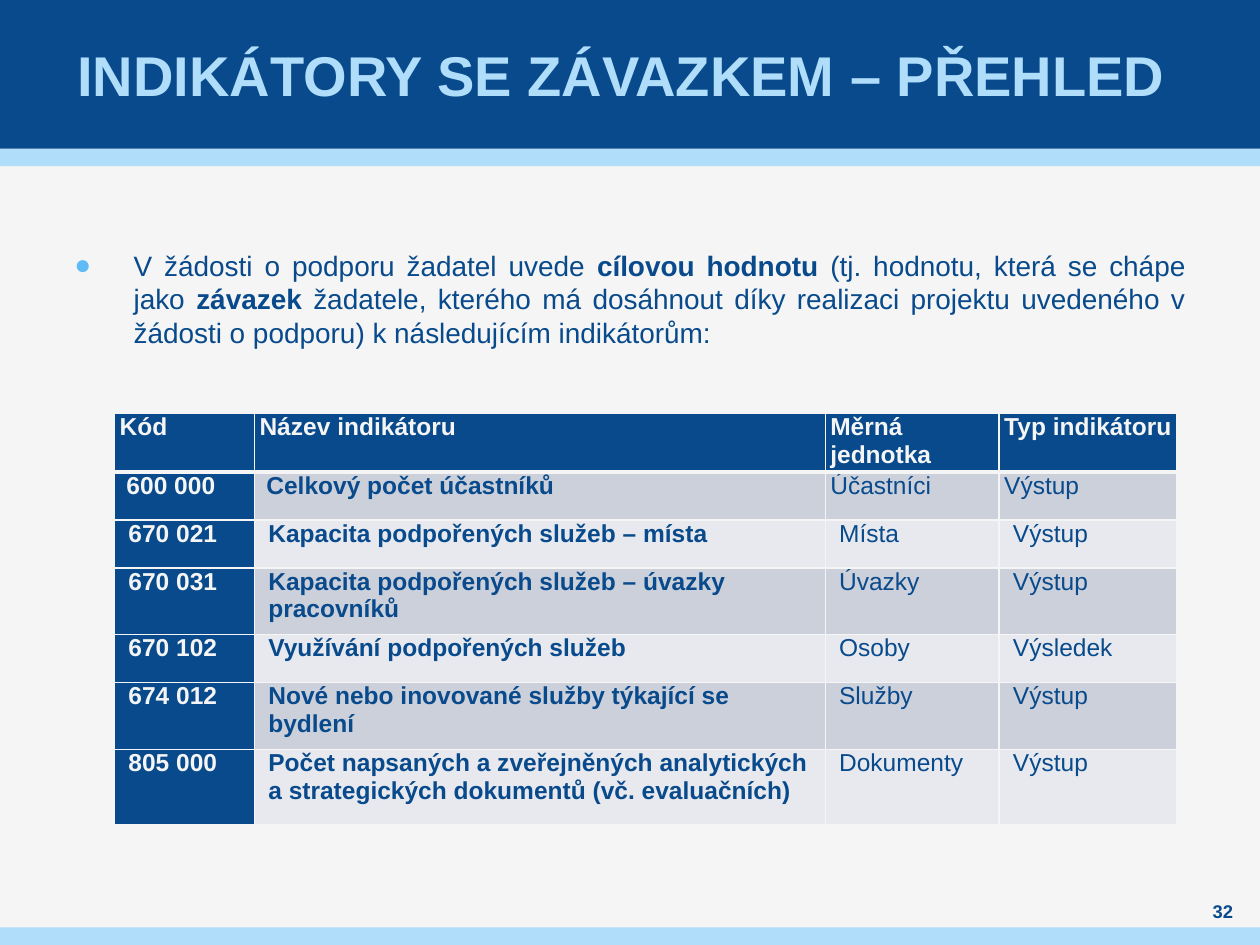
from lxml import etree
from pptx import Presentation
from pptx.dml.color import RGBColor
from pptx.enum.shapes import MSO_SHAPE
from pptx.enum.text import MSO_ANCHOR, PP_ALIGN
from pptx.oxml.ns import qn
from pptx.util import Inches, Pt

RECT = MSO_SHAPE.RECTANGLE
TOP, MIDDLE = MSO_ANCHOR.TOP, MSO_ANCHOR.MIDDLE
LEFT, CENTER, JUSTIFY = PP_ALIGN.LEFT, PP_ALIGN.CENTER, PP_ALIGN.JUSTIFY
NAVY, SKY, DOT, PAPER = "084A8B", "AFDDFA", "5FBBF5", "F5F5F5"
BANDS = ("CCD0DA", "E7E9EE")

INTRO = [
    ("V žádosti o podporu žadatel uvede ", False),
    ("cílovou hodnotu ", True),
    ("(tj. hodnotu, která se chápe jako ", False),
    ("závazek", True),
    (" žadatele, kterého má dosáhnout díky realizaci projektu uvedeného "
     "v žádosti o podporu) k následujícím indikátorům:", False),
]
INDICATORS = [
    ("Kód", "Název indikátoru", "Měrná jednotka", "Typ indikátoru"),
    (" 600 000", " Celkový počet účastníků", "Účastníci", "Výstup"),
    ("670 021", "Kapacita podpořených služeb – místa", "Místa", "Výstup"),
    ("670 031", "Kapacita podpořených služeb – úvazky pracovníků", "Úvazky", "Výstup"),
    ("670 102", "Využívání podpořených služeb", "Osoby", "Výsledek"),
    ("674 012", "Nové nebo inovované služby týkající se bydlení", "Služby", "Výstup"),
    ("805 000", "Počet napsaných a zveřejněných analytických a strategických "
     "dokumentů (vč. evaluačních)", "Dokumenty", "Výstup"),
]
COLUMNS = (1.11, 4.53, 1.38, 1.41)
ROWS = (0.43, 0.38, 0.38, 0.53, 0.38, 0.53, 0.6)


def rgb(value):
    """Turn a hex string into a colour."""
    return RGBColor.from_string(value)


class Deck:
    """Holds the style and the current slide."""

    def __init__(self, font):
        """Start a presentation with one blank slide."""
        self.font = font
        self.prs = Presentation()
        self.prs.slide_width, self.prs.slide_height = Inches(10), Inches(7.5)
        self.s = self.prs.slides.add_slide(self.prs.slide_layouts[6])
        self.s.background.fill.solid()
        self.s.background.fill.fore_color.rgb = rgb(PAPER)

    def band(self, y, h, color):
        """Draw a band across the slide."""
        sp = self.s.shapes.add_shape(RECT, 0, Inches(y), self.prs.slide_width, Inches(h))
        sp.shadow.inherit = False
        sp.fill.solid()
        sp.fill.fore_color.rgb = rgb(color)
        sp.line.fill.background()

    def run(self, p, text, size, color, bold):
        """Add one styled run."""
        r = p.add_run()
        r.text = text
        r.font.name, r.font.size, r.font.bold = self.font, Pt(size), bold
        r.font.color.rgb = rgb(color)

    def spacing(self, p, points, margin, indent):
        """Set the paragraph spacing and indents."""
        p.space_before = p.space_after = Pt(points)
        pPr = p._p.get_or_add_pPr()
        pPr.set("marL", str(Inches(margin)))
        pPr.set("indent", str(Inches(indent)))
        return pPr

    def text(self, box, runs, size, color, align, anchor=TOP, inset=0):
        """Add a text box with one paragraph and return the paragraph."""
        tf = self.s.shapes.add_textbox(*map(Inches, box)).text_frame
        tf.word_wrap = True
        tf.vertical_anchor = anchor
        tf.margin_left = tf.margin_right = Inches(inset)
        tf.margin_top = tf.margin_bottom = 0
        p = tf.paragraphs[0]
        p.alignment = align
        for text, bold in runs:
            self.run(p, text, size, color, bold)
        return p

    def bullet(self, p, char, color):
        """Give a paragraph a hanging bullet."""
        pPr = self.spacing(p, 6, 0.47, -0.47)
        clr = etree.SubElement(pPr, qn("a:buClr"))
        etree.SubElement(clr, qn("a:srgbClr"), val=color)
        etree.SubElement(pPr, qn("a:buFont"), typeface=self.font)
        etree.SubElement(pPr, qn("a:buChar"), char=char)

    def borders(self, cell, widths):
        """Set the left, right, top and bottom borders of a cell."""
        tcPr = cell._tc.get_or_add_tcPr()
        for i, (side, width) in enumerate(zip("LRTB", widths)):
            ln = etree.Element(qn("a:ln" + side), w=str(Pt(width)))
            fill = etree.SubElement(ln, qn("a:solidFill"))
            etree.SubElement(fill, qn("a:srgbClr"), val=PAPER)
            tcPr.insert(i, ln)

    def cell(self, cell, text, row, col):
        """Fill one table cell according to its row and column."""
        dark = row == 0 or col == 0
        cell.fill.solid()
        cell.fill.fore_color.rgb = rgb(NAVY if dark else BANDS[(row - 1) % 2])
        cell.margin_left = cell.margin_right = Inches(0.07 if row > 1 else 0)
        cell.margin_top = cell.margin_bottom = 0
        p = cell.text_frame.paragraphs[0]
        p.alignment = LEFT
        self.spacing(p, 3, 0.04, 0)
        self.run(p, text, 14, PAPER if dark else NAVY, row == 0 or col < 2)
        self.borders(cell, (1, 1, 3 if row == 1 else 1, 3 if row == 0 else 1))

    def table(self, x, y, columns, rows, data):
        """Add a table from rows of text."""
        size = map(Inches, (x, y, sum(columns), sum(rows)))
        table = self.s.shapes.add_table(len(rows), len(columns), *size).table
        for column, width in zip(table.columns, columns):
            column.width = Inches(width)
        for row, height in zip(table.rows, rows):
            row.height = Inches(height)
        for i, record in enumerate(data):
            for j, text in enumerate(record):
                self.cell(table.cell(i, j), text, i, j)


def main():
    """Build the slide and save it."""
    deck = Deck("Arial")
    deck.band(1.18, 0.14, SKY)
    deck.band(0, 1.18, NAVY)
    deck.band(7.36, 0.14, SKY)
    title = [("INDIKÁTORY SE ZÁVAZKEM – PŘEHLED ", True)]
    deck.text((0.39, 0, 9.21, 1.18), title, 32, SKY, CENTER, MIDDLE, 0.04)
    p = deck.text((0.59, 1.97, 8.82, 4.72), INTRO, 16, NAVY, JUSTIFY)
    deck.bullet(p, "●", DOT)
    deck.text((9.45, 7.13, 0.51, 0.2), [("32", True)], 10.5, NAVY, CENTER, MIDDLE)
    deck.table(0.91, 3.28, COLUMNS, ROWS, INDICATORS)
    deck.prs.save("out.pptx")


if __name__ == "__main__":
    main()
